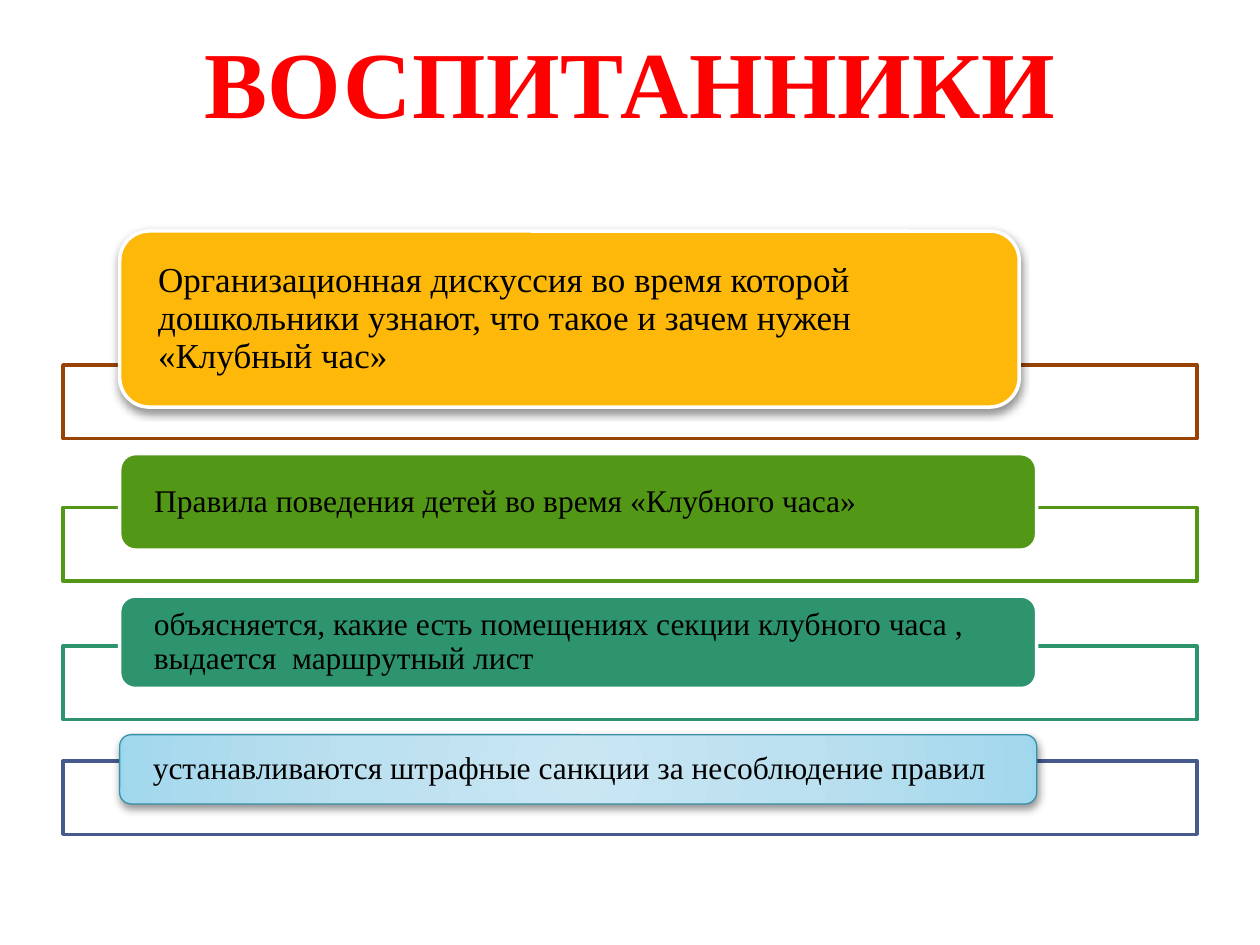
"""Build the slide about what the children learn before the club hour."""
from dataclasses import dataclass

from lxml.etree import SubElement
from pptx import Presentation
from pptx.dml.color import RGBColor
from pptx.enum.shapes import MSO_SHAPE
from pptx.enum.text import MSO_ANCHOR, PP_ALIGN
from pptx.oxml.ns import qn
from pptx.util import Pt

COLORS = {
    "title": "FF0000",
    "text": "000000",
    "white": "FFFFFF",
    "brown": "964305",
    "amber": "FEB80A",
    "green": "539717",
    "teal": "2D946E",
    "navy": "475A8D",
    "sky": "3891A7",
}
GLOW_STOPS = {0: "C9E6F2", 50: "BBE0EF", 97: "A4D8ED", 100: "9BD7EE"}
FONT = "Times New Roman"
FRAME_LEFT, FRAME_WIDTH, FRAME_HEIGHT = 36, 648, 42
LABEL_LEFT = 68.4


@dataclass
class Step:
    """One framed statement, with positions in points."""

    text: str
    frame_top: float
    frame_color: str
    label_top: float
    label_height: float
    label_width: float = 524
    size: float = 18
    fill: str | None = None
    line: str = "white"
    line_width: float = 2
    raised: bool = False


STEPS = [
    Step("Организационная дискуссия во время которой дошкольники узнают, "
         "что такое и зачем нужен «Клубный час»",
         208.6, "brown", 132, 100.6, label_width=514, size=20, fill="amber", raised=True),
    Step("Правила поведения детей во время «Клубного часа»",
         290, "green", 259.2, 55.2, fill="green"),
    Step("объясняется, какие есть помещениях секции клубного часа , "
         "выдается  маршрутный лист",
         369.2, "teal", 340.6, 52.8, fill="teal"),
    Step("устанавливаются штрафные санкции за несоблюдение правил",
         434.8, "navy", 419.8, 39.6, line="sky", line_width=0.75, raised=True),
]


def color(name: str) -> RGBColor:
    """Return a named colour."""
    return RGBColor.from_string(COLORS[name])


def write_text(shape, text: str, *, size: float, color_name: str = "text",
               bold: bool = False, align=PP_ALIGN.LEFT, anchor=MSO_ANCHOR.MIDDLE,
               side_inset: float = 17, top_inset: float = 0,
               line_spacing: float = 0.9, letter_spacing: float = 0) -> None:
    """Write one formatted paragraph in a shape."""
    frame = shape.text_frame
    frame.word_wrap = True
    frame.vertical_anchor = anchor
    frame.margin_left = frame.margin_right = Pt(side_inset)
    frame.margin_top, frame.margin_bottom = Pt(top_inset), Pt(0)
    paragraph = frame.paragraphs[0]
    paragraph.alignment = align
    paragraph.line_spacing = line_spacing
    run = paragraph.add_run()
    run.text = text
    run.font.name = FONT
    run.font.size = Pt(size)
    run.font.bold = bold
    run.font.color.rgb = color(color_name)
    if letter_spacing:
        run._r.get_or_add_rPr().set("spc", str(int(letter_spacing * 100)))


def add_box(slide, kind, left: float, top: float, width: float, height: float,
            *, fill: str | None, line: str, line_width: float):
    """Add an outlined shape, filled when a colour is named."""
    shape = slide.shapes.add_shape(kind, Pt(left), Pt(top), Pt(width), Pt(height))
    shape.shadow.inherit = False
    if fill:
        shape.fill.solid()
        shape.fill.fore_color.rgb = color(fill)
    shape.line.color.rgb = color(line)
    shape.line.width = Pt(line_width)
    return shape


def add_glow(shape) -> None:
    """Fill a shape with a circular gradient from its centre."""
    shape.fill.gradient()
    gradient = shape._element.spPr.find(qn("a:gradFill"))
    for child in list(gradient):
        gradient.remove(child)
    stops = SubElement(gradient, qn("a:gsLst"))
    for position, value in GLOW_STOPS.items():
        stop = SubElement(stops, qn("a:gs"), pos=str(position * 1000))
        SubElement(stop, qn("a:srgbClr"), val=value)
    circle = SubElement(gradient, qn("a:path"), path="circle")
    SubElement(circle, qn("a:fillToRect"), l="50000", t="50000", r="50000", b="50000")


def add_shadow(shape) -> None:
    """Drop a soft shadow below a shape."""
    effects = shape._element.spPr.find(qn("a:effectLst"))
    shadow = SubElement(effects, qn("a:outerShdw"), blurRad=str(Pt(5)), dist=str(Pt(2)),
                        dir="5400000", rotWithShape="0")
    shade = SubElement(shadow, qn("a:srgbClr"), val=COLORS["text"])
    SubElement(shade, qn("a:alpha"), val="43000")


def add_step(slide, step: Step) -> None:
    """Draw a wide frame with its rounded label on top."""
    add_box(slide, MSO_SHAPE.RECTANGLE, FRAME_LEFT, step.frame_top, FRAME_WIDTH,
            FRAME_HEIGHT, fill="white", line=step.frame_color, line_width=2)
    label = add_box(slide, MSO_SHAPE.ROUNDED_RECTANGLE, LABEL_LEFT, step.label_top,
                    step.label_width, step.label_height, fill=step.fill,
                    line=step.line, line_width=step.line_width)
    if step.fill is None:
        add_glow(label)
    if step.raised:
        add_shadow(label)
    write_text(label, step.text, size=step.size)


def main() -> None:
    """Build and save the presentation."""
    presentation = Presentation()
    presentation.slide_width, presentation.slide_height = Pt(720), Pt(540)
    slide = presentation.slides.add_slide(presentation.slide_layouts[6])
    title = slide.shapes.add_textbox(Pt(36), Pt(21.6), Pt(648), Pt(90))
    write_text(title, "ВОСПИТАННИКИ", size=54, color_name="title", bold=True,
               align=PP_ALIGN.CENTER, anchor=MSO_ANCHOR.TOP, side_inset=7.2,
               top_inset=-8, line_spacing=1.0, letter_spacing=0.5)
    for step in STEPS:
        add_step(slide, step)
    presentation.save("out.pptx")


if __name__ == "__main__":
    main()
